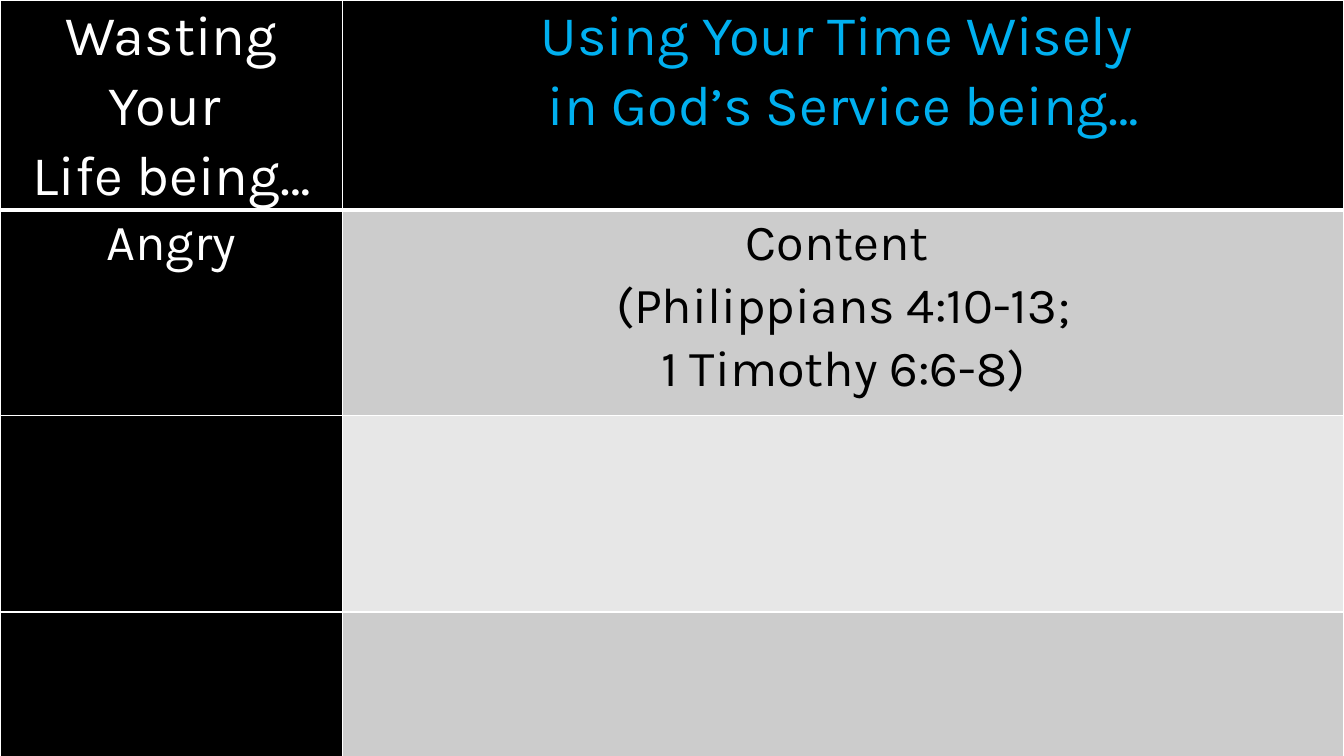
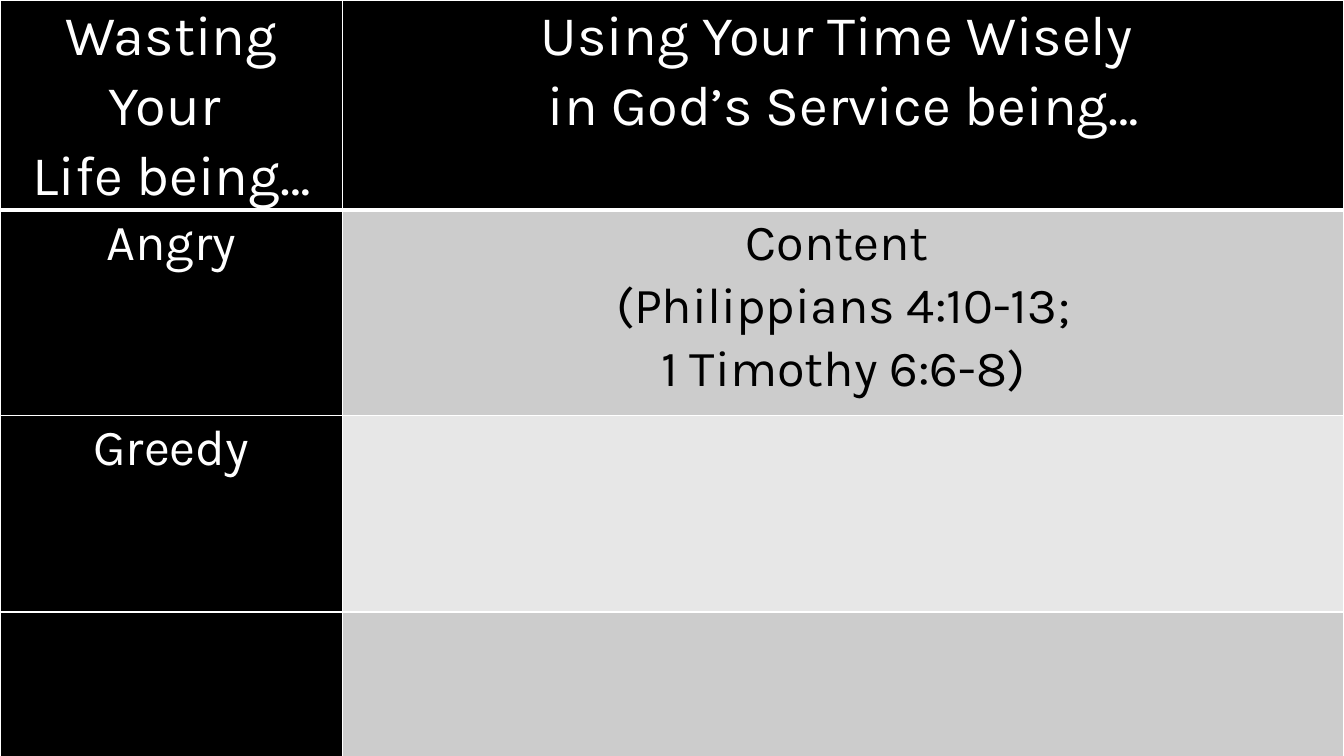
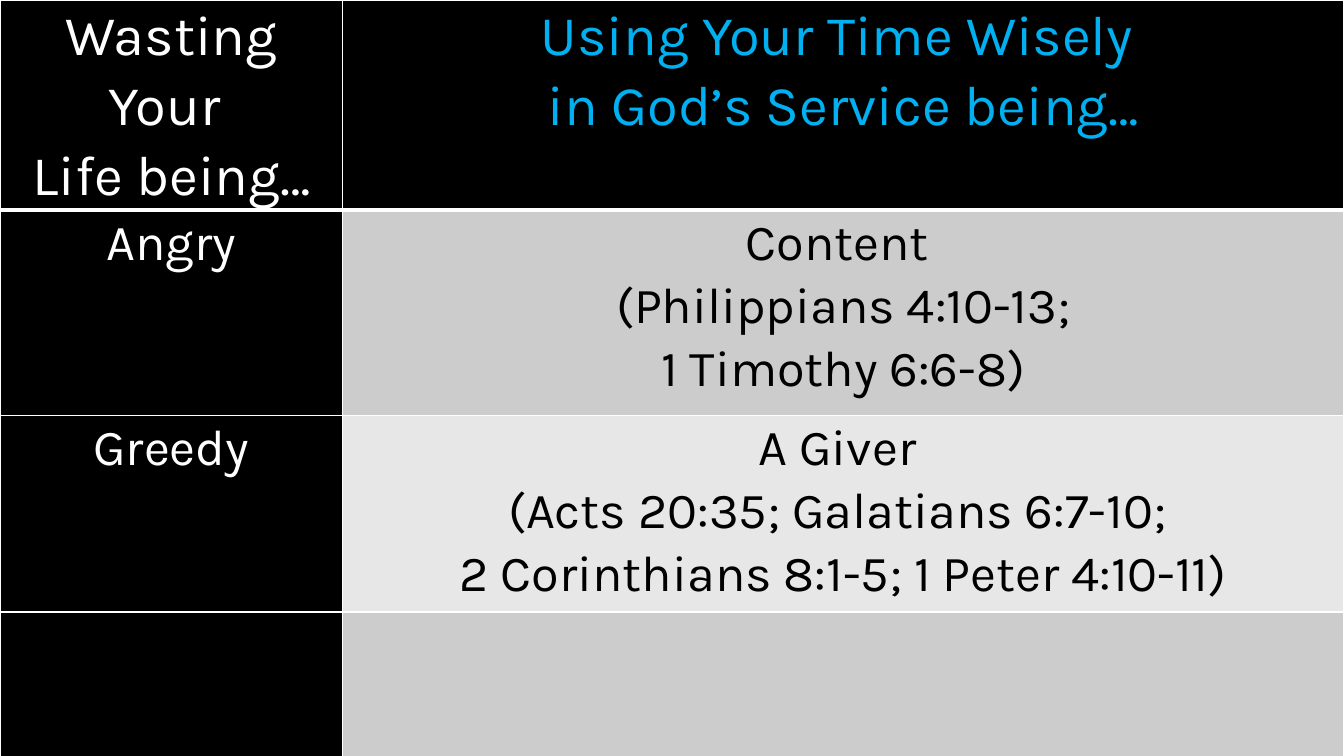
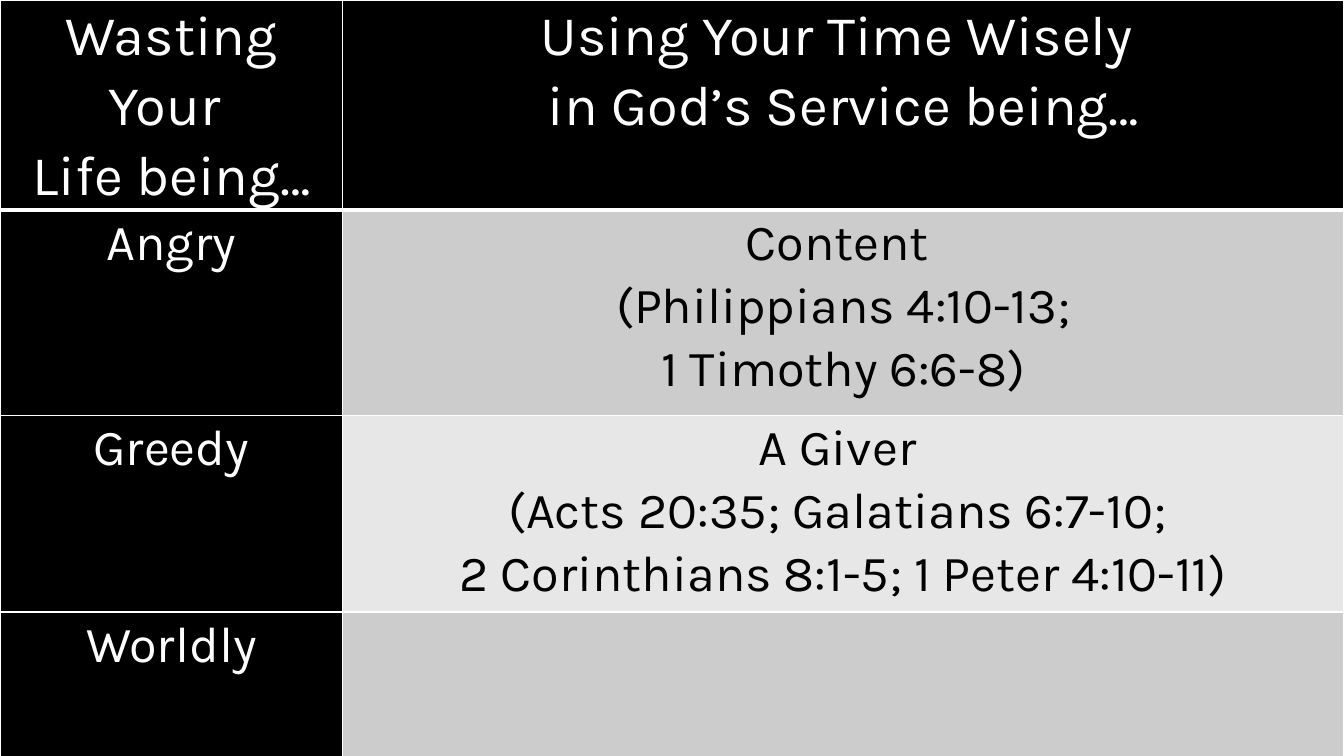
import lxml.etree
import pptx
import pptx.dml.color
import pptx.enum.text
import pptx.oxml.ns
import pptx.util

Inches = pptx.util.Inches
Pt = pptx.util.Pt
qn = pptx.oxml.ns.qn

COLORS = {
    "black": "000000",
    "white": "FFFFFF",
    "highlight": "00B0F0",
    "band_dark": "CCCCCC",
    "band_light": "E7E7E7",
}
FONT = "Karla"
SLIDE_W, SLIDE_H = 13.33, 7.5
WASTING_W = 3.4
ROW_HEIGHTS = [1.58, 2.04, 1.95]

HEADINGS = [
    ["Wasting Your ", "Life being…"],
    ["Using Your Time Wisely ", "in God’s Service being…"],
]
CONTRASTS = [
    ["Angry"],
    ["Content ", "(Philippians 4:10-13;", "1 Timothy 6:6-8)"],
    ["Greedy"],
    ["A Giver ", "(Acts 20:35; Galatians 6:7-10; ", "2 Corinthians 8:1-5; 1 Peter 4:10-11)"],
    ["Worldly"],
]
REVEALED_COUNTS = [2, 3, 4, 5]


def rgb(name):
    """Return the named palette colour."""
    return pptx.dml.color.RGBColor.from_string(COLORS[name])


def set_borders(cell, top, bottom):
    """Draw white borders, with the given top and bottom widths in points."""
    tcPr = cell._tc.get_or_add_tcPr()
    for side, width in (("L", 1), ("R", 1), ("T", top), ("B", bottom)):
        ln = lxml.etree.SubElement(tcPr, qn(f"a:ln{side}"), w=str(Pt(width)))
        fill = lxml.etree.SubElement(ln, qn("a:solidFill"))
        lxml.etree.SubElement(fill, qn("a:srgbClr"), val=COLORS["white"])


def style_cell(cell, row, col):
    """Give a cell its borders, fill and margins by its place in the table."""
    set_borders(cell, top=3 if row == 1 else 1, bottom=3 if row == 0 else 1)
    band = "band_dark" if row % 2 else "band_light"
    cell.fill.solid()
    cell.fill.fore_color.rgb = rgb("black" if row == 0 or col == 0 else band)
    cell.margin_left = cell.margin_right = Inches(0.07)
    cell.margin_top = cell.margin_bottom = 0


def write_lines(cell, lines, size, color):
    """Write centred lines, one paragraph each."""
    tf = cell.text_frame
    for i, line in enumerate(lines):
        p = tf.add_paragraph() if i else tf.paragraphs[0]
        p.text = line
        p.alignment = pptx.enum.text.PP_ALIGN.CENTER
        p.line_spacing = 1.07
        p.font.name = FONT
        p.font.size = Pt(size)
        p.font.color.rgb = rgb(color)


def add_contrast_table(s, left, top, width, height, revealed):
    """Add the two-column table showing the first revealed contrast cells."""
    heights = ROW_HEIGHTS + [height - sum(ROW_HEIGHTS)]
    widths = [WASTING_W, width - WASTING_W]
    table = s.shapes.add_table(
        len(heights), len(widths), Inches(left), Inches(top), Inches(width), Inches(height)
    ).table
    table.first_row = table.horz_banding = False
    for column, w in zip(table.columns, widths):
        column.width = Inches(w)
    for row, h in zip(table.rows, heights):
        row.height = Inches(h)

    for row in range(len(heights)):
        for col in range(len(widths)):
            style_cell(table.cell(row, col), row, col)

    heading_colors = ["white", "white" if revealed % 2 else "highlight"]
    for col, lines in enumerate(HEADINGS):
        write_lines(table.cell(0, col), lines, 40, heading_colors[col])
    for i, lines in enumerate(CONTRASTS[:revealed]):
        row, col = divmod(i, 2)
        write_lines(table.cell(row + 1, col), lines, 36, "black" if col else "white")


def main():
    """Build the step-by-step table slides and save them."""
    prs = pptx.Presentation()
    prs.slide_width, prs.slide_height = Inches(SLIDE_W), Inches(SLIDE_H)
    background = prs.slide_master.background.fill
    background.solid()
    background.fore_color.rgb = rgb("black")
    blank = prs.slide_layouts.get_by_name("Blank")
    for revealed in REVEALED_COUNTS:
        s = prs.slides.add_slide(blank)
        add_contrast_table(s, 0, 0, SLIDE_W, SLIDE_H, revealed)
    prs.save("out.pptx")


if __name__ == "__main__":
    main()
